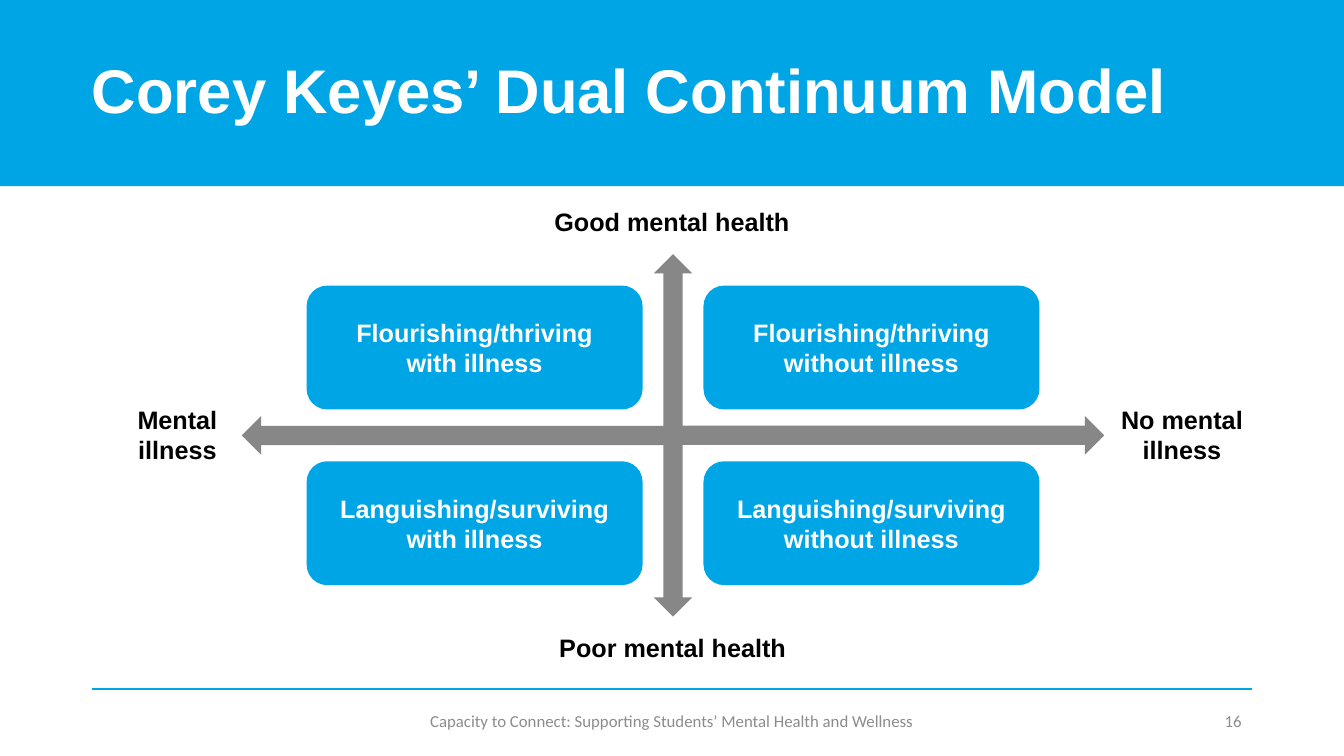
from dataclasses import dataclass
from itertools import product
from math import cos, radians, sin

from lxml import etree
from pptx import Presentation
from pptx.dml.color import RGBColor
from pptx.enum.shapes import MSO_CONNECTOR, MSO_SHAPE
from pptx.enum.text import MSO_ANCHOR, MSO_AUTO_SIZE, PP_ALIGN
from pptx.oxml.ns import qn
from pptx.util import Pt

CENTER, LEFT, RIGHT = PP_ALIGN.CENTER, PP_ALIGN.LEFT, PP_ALIGN.RIGHT
MIDDLE, TOP = MSO_ANCHOR.MIDDLE, MSO_ANCHOR.TOP
FIXED, GROW = MSO_AUTO_SIZE.NONE, MSO_AUTO_SIZE.SHAPE_TO_FIT_TEXT
ROUNDED, ARROW = MSO_SHAPE.ROUNDED_RECTANGLE, MSO_SHAPE.RIGHT_ARROW
STRAIGHT = MSO_CONNECTOR.STRAIGHT
TITLE_ONLY = 5


@dataclass(frozen=True)
class Theme:
    """Colours, fonts and type sizes of the slide."""
    blue: RGBColor = RGBColor.from_string("00A5E6")
    arrow: RGBColor = RGBColor.from_string("878787")
    footer: RGBColor = RGBColor.from_string("8C8C8C")
    white: RGBColor = RGBColor.from_string("FFFFFF")
    black: RGBColor = RGBColor.from_string("000000")
    main_font: str = "Arial"
    footer_font: str = "Calibri"
    title_size: int = 44
    label_size: int = 18
    footer_size: int = 12


THEME = Theme()


def apply(target, settings):
    """Set every attribute in settings on target."""
    for attribute, value in settings.items():
        setattr(target, attribute, value)


def points(*lengths):
    """Convert numbers to lengths in points."""
    return [Pt(length) for length in lengths]


def paint(shape, color):
    """Give a shape a plain fill without line or shadow."""
    shape.fill.solid()
    shape.fill.fore_color.rgb = color
    shape.line.fill.background()
    shape.shadow.inherit = False


def write(shape, lines, color, size=THEME.label_size, font=THEME.main_font,
          bold=True, align=CENTER, frame_format=None):
    """Write one formatted paragraph per line into a shape."""
    frame = shape.text_frame
    apply(frame, {"word_wrap": True, "vertical_anchor": MIDDLE,
                  "auto_size": GROW} | (frame_format or {}))
    frame.text = "\n".join(lines)
    for paragraph in frame.paragraphs:
        paragraph.alignment = align
        apply(paragraph.font, {"name": font, "size": Pt(size), "bold": bold})
        paragraph.font.color.rgb = color


def add_title(slide, text):
    """Turn the title placeholder into the blue header band."""
    title = slide.shapes.title
    apply(title, dict(zip(("left", "top", "width", "height"), points(0, 0, 960, 133))))
    paint(title, THEME.blue)
    write(title, [text], THEME.white, THEME.title_size, align=LEFT,
          frame_format={"auto_size": FIXED, "margin_left": Pt(65.5)})
    title.text_frame.paragraphs[0].line_spacing = 0.9


def add_quadrant(slide, left, top, lines):
    """Add one rounded box of the model."""
    quadrant = slide.shapes.add_shape(ROUNDED, *points(left, top, 240, 88.5))
    paint(quadrant, THEME.blue)
    write(quadrant, lines, THEME.white,
          frame_format={"margin_top": Pt(18), "margin_bottom": Pt(18)})


def add_axes(slide, center_x, center_y, arms):
    """Add grouped arrows pointing outwards from the crossing."""
    axes = slide.shapes.add_group_shape()
    thickness = 27.5
    for angle, length in arms.items():
        middle_x = center_x + cos(radians(angle)) * length / 2
        middle_y = center_y + sin(radians(angle)) * length / 2
        arm = axes.shapes.add_shape(ARROW, *points(
            middle_x - length / 2, middle_y - thickness / 2, length, thickness))
        arm.rotation = angle
        paint(arm, THEME.arrow)


def add_axis_label(slide, box, lines):
    """Add the name of one end of an axis."""
    label = slide.shapes.add_textbox(*points(*box))
    write(label, lines, THEME.black, frame_format={"vertical_anchor": TOP})


def add_footer_text(slide, left, width, text, align):
    """Add a small grey text in the footer row."""
    footer = slide.shapes.add_textbox(*points(left, 500.5, width, 28.75))
    write(footer, [text], THEME.footer, THEME.footer_size, THEME.footer_font,
          False, align, {"auto_size": FIXED})


def add_footer_rule(slide):
    """Add the thin blue line above the footer."""
    rule = slide.shapes.add_connector(STRAIGHT, *points(66, 492.25, 894, 492.25))
    rule.line.color.rgb = THEME.blue
    rule.line.width = Pt(1.5)
    etree.SubElement(rule.line._get_or_add_ln().getparent(), qn("a:effectLst"))


def main():
    """Build the slide and save it."""
    deck = Presentation()
    apply(deck, {"slide_width": Pt(960), "slide_height": Pt(540)})
    slide = deck.slides.add_slide(deck.slide_layouts[TITLE_ONLY])
    add_title(slide, "Corey Keyes’ Dual Continuum Model")

    states = {"Flourishing/thriving": 204, "Languishing/surviving": 329.5}
    illnesses = {"with illness": 219, "without illness": 502.5}
    for (state, top), (illness, left) in product(states.items(), illnesses.items()):
        add_quadrant(slide, left, top, [state, illness])

    add_axes(slide, 480.75, 311, {0: 308, 180: 308, 90: 129.5, 270: 129.5})
    add_axis_label(slide, (359.5, 143.5, 241, 29), ["Good mental health"])
    add_axis_label(slide, (360, 448, 241, 29), ["Poor mental health"])
    add_axis_label(slide, (88, 285.25, 77.5, 51), ["Mental", "illness"])
    add_axis_label(slide, (793.5, 285.25, 101.5, 51), ["No mental", "illness"])

    add_footer_rule(slide)
    add_footer_text(slide, 300, 360, "Capacity to Connect: Supporting Students’ "
                    "Mental Health and Wellness", CENTER)
    add_footer_text(slide, 678, 216, "16", RIGHT)
    deck.save("out.pptx")


if __name__ == "__main__":
    main()
